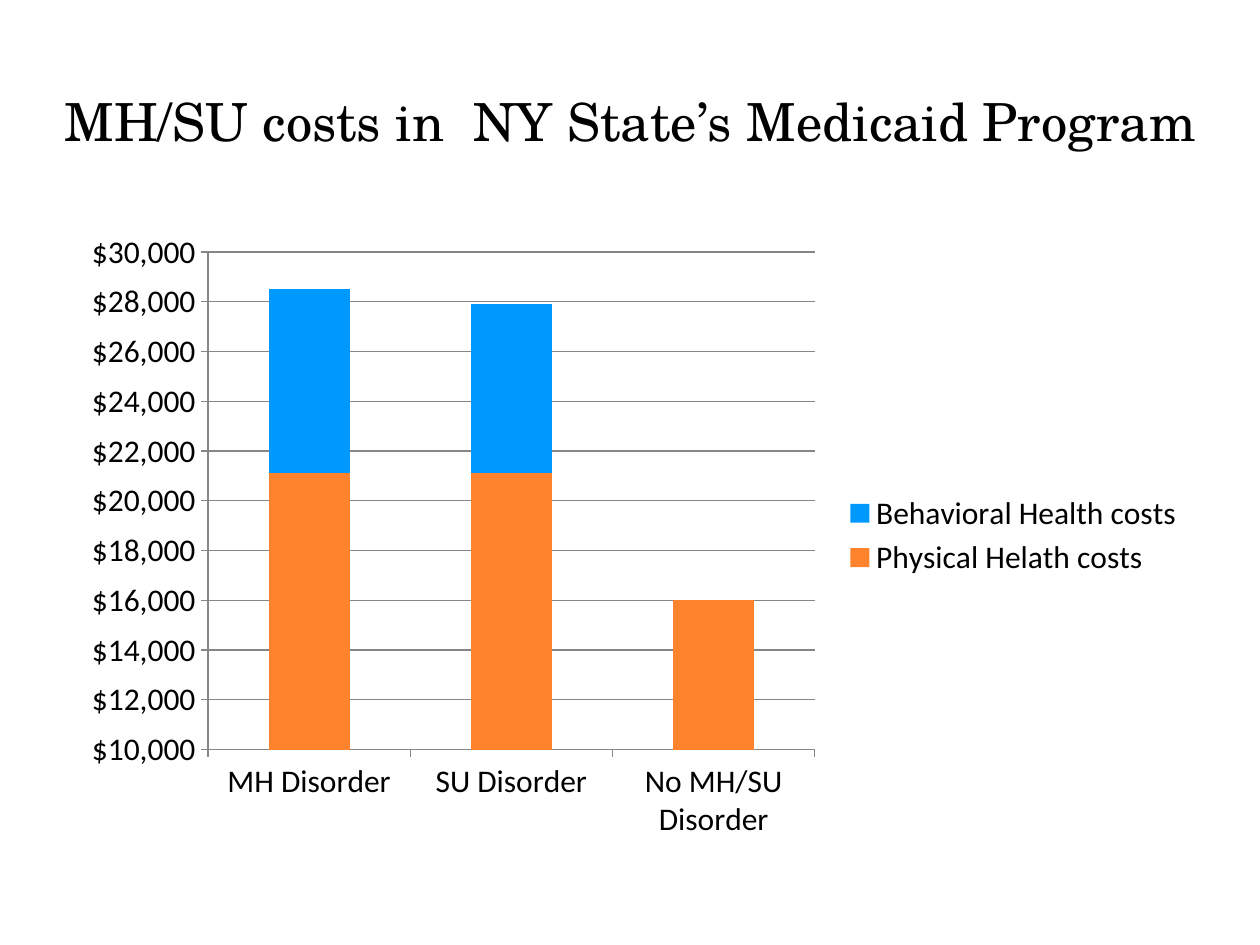
from lxml import etree
from pptx import Presentation
from pptx.chart.data import CategoryChartData
from pptx.dml.color import RGBColor
from pptx.enum import chart as ch, text
from pptx.oxml import ns
from pptx.util import Inches, Pt

TITLE = "MH/SU costs in  NY State’s Medicaid Program"
GROUPS = ["MH Disorder", "SU Disorder", "No MH/SU Disorder"]
COSTS = [
    ("Physical Helath costs", [21100, 21100, 16000], "FF822D"),
    ("Behavioral Health costs", [7400, 6800, 0], "0099FF"),
]
DOLLARS = '"$"#,##0'
PLOT_LAYOUT = {"x": 0.12, "y": 0.05, "w": 0.54, "h": 0.79}


def rgb(value):
    return RGBColor.from_string(value)


def style_font(font, name, size):
    font.name = name
    font.size = Pt(size)
    font.color.rgb = rgb("000000")


def place_plot(chart):
    plot_area = chart._chartSpace.chart.plotArea
    for old in plot_area.findall(ns.qn("c:layout")):
        plot_area.remove(old)
    layout = etree.Element(ns.qn("c:layout"))
    manual = etree.SubElement(layout, ns.qn("c:manualLayout"))
    settings = {"layoutTarget": "inner", "xMode": "edge", "yMode": "edge", **PLOT_LAYOUT}
    for tag, value in settings.items():
        etree.SubElement(manual, ns.qn(f"c:{tag}")).set("val", str(value))
    plot_area.insert(0, layout)


def add_title(slide):
    heading = slide.shapes.add_textbox(Inches(0.17), Inches(0.42), Inches(9.67), Inches(1.08))
    frame = heading.text_frame
    frame.word_wrap = True
    frame.vertical_anchor = text.MSO_ANCHOR.MIDDLE
    line = frame.paragraphs[0]
    line.text = TITLE
    line.alignment = text.PP_ALIGN.CENTER
    style_font(line.font, "TeX Gyre Schola", 30)


def add_costs(slide):
    data = CategoryChartData(number_format=DOLLARS)
    data.categories = GROUPS
    for name, values, _ in COSTS:
        data.add_series(name, values)
    chart = slide.shapes.add_chart(
        ch.XL_CHART_TYPE.COLUMN_STACKED,
        Inches(0.58), Inches(1.75), Inches(8.92), Inches(5), data,
    ).chart
    chart.has_title = False
    style_font(chart.font, "Calibri", 18)

    plot = chart.plots[0]
    plot.vary_by_categories = False
    plot.gap_width = 150
    plot.overlap = 100
    for series, (_, _, color) in zip(plot.series, COSTS):
        series.format.fill.solid()
        series.format.fill.fore_color.rgb = rgb(color)

    amounts = chart.value_axis
    amounts.minimum_scale = 10000
    amounts.maximum_scale = 30000
    amounts.major_unit = 2000
    amounts.has_major_gridlines = True
    amounts.tick_labels.number_format = DOLLARS
    amounts.tick_labels.number_format_is_linked = False
    for axis in (amounts, chart.category_axis):
        axis.major_tick_mark = ch.XL_TICK_MARK.OUTSIDE
    for part in (amounts, chart.category_axis, amounts.major_gridlines):
        part.format.line.color.rgb = rgb("868686")
        part.format.line.width = Pt(0.75)

    chart.has_legend = True
    chart.legend.position = ch.XL_LEGEND_POSITION.RIGHT
    chart.legend.include_in_layout = False
    place_plot(chart)


def main():
    deck = Presentation()
    deck.slide_width = Inches(10)
    deck.slide_height = Inches(7.5)
    slide = deck.slides.add_slide(deck.slide_layouts[6])
    add_title(slide)
    add_costs(slide)
    deck.save("out.pptx")


if __name__ == "__main__":
    main()
